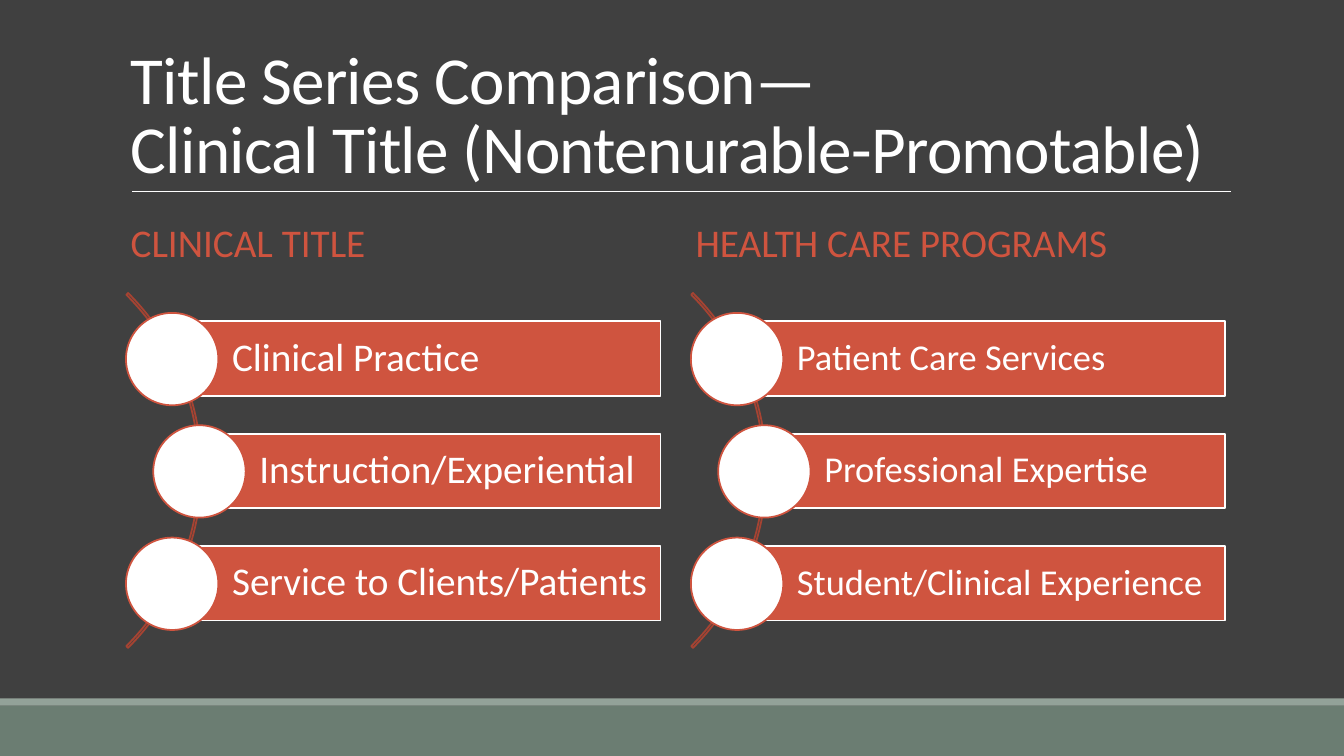
from lxml import etree
from pptx import Presentation
from pptx import util as u
from pptx.dml.color import RGBColor
from pptx.enum import shapes, text
from pptx.oxml.ns import qn

CHARCOAL = RGBColor(0x40, 0x40, 0x40)
WHITE = RGBColor(0xFF, 0xFF, 0xFF)
RUST = RGBColor(0xCF, 0x54, 0x3F)
DARK_RUST = RGBColor(0xA6, 0x43, 0x32)
SAGE = RGBColor(0x6B, 0x7D, 0x72)
LIGHT_SAGE = RGBColor(0x93, 0xA2, 0x99)


def px(length):
    return u.Emu(length * 9525)


class SlideBuilder:
    font = "Calibri"
    outline = 1.25

    def __init__(self, page):
        self.page = page

    def place(self, shape, left, top, width, height):
        shape.left, shape.top = px(left), px(top)
        shape.width, shape.height = px(width), px(height)

    def span(self, para, words, size, color):
        span = para.add_run()
        span.text = words
        span.font.name, span.font.size = self.font, u.Pt(size)
        span.font.color.rgb = color
        return span

    def frame(self, shape, anchor=text.MSO_ANCHOR.MIDDLE, line_spacing=0.9):
        frame = shape.text_frame
        frame.word_wrap = True
        frame.auto_size = text.MSO_AUTO_SIZE.NONE
        frame.vertical_anchor = anchor
        para = frame.paragraphs[0]
        para.alignment = text.PP_ALIGN.LEFT
        para.line_spacing = line_spacing
        return frame, para

    def title(self, lines, left, top, width, height):
        title = self.page.shapes.title
        self.place(title, left, top, width, height)
        _, para = self.frame(title, text.MSO_ANCHOR.BOTTOM, 0.85)
        for index, line in enumerate(lines):
            if index:
                para.add_line_break()
            span = self.span(para, line, 48, WHITE)
            span.font._element.set("spc", "-50")

    def heading(self, words, left, top, width, height):
        box = self.page.shapes.add_textbox(px(left), px(top), px(width), px(height))
        _, para = self.frame(box)
        para.space_before, para.space_after = u.Pt(12), u.Pt(2)
        self.span(para, words, 28, RUST)

    def shape(self, kind, left, top, width, height, fill=None, line=None):
        shape = self.page.shapes.add_shape(kind, px(left), px(top), px(width), px(height))
        shape.shadow.inherit = False
        if fill is None:
            shape.fill.background()
        else:
            shape.fill.solid()
            shape.fill.fore_color.rgb = fill
        if line is None:
            shape.line.fill.background()
        else:
            shape.line.color.rgb = line
            shape.line.width = u.Pt(self.outline)
        return shape

    def rule(self, left, right, top):
        rule = self.page.shapes.add_connector(
            shapes.MSO_CONNECTOR.STRAIGHT, px(left), px(top), px(right), px(top))
        rule.line.color.rgb = WHITE
        rule.line.width = u.Pt(0.5)
        etree.SubElement(rule._element.spPr, qn("a:effectLst"))

    def arc(self, left, top, size):
        arc = self.shape(shapes.MSO_SHAPE.BLOCK_ARC, left, top, size, size, line=DARK_RUST)
        for index, value in enumerate((189, 27, 0.005)):
            arc.adjustments[index] = value

    def bar(self, words, left, top, width, height, size, inset):
        bar = self.shape(shapes.MSO_SHAPE.RECTANGLE, left, top, width, height, RUST, WHITE)
        frame, para = self.frame(bar)
        frame.margin_left = px(57)
        frame.margin_top = frame.margin_right = frame.margin_bottom = px(inset)
        self.span(para, words, size, WHITE)

    def curved_list(self, items, left, size, inset):
        self.arc(left - 406, 209, 478)
        for row, words in enumerate(items):
            indent = 26 if row == 1 else 0
            top = 306 + 107 * row
            self.bar(words, left + 44 + indent, top, 465 - indent, 71, size, inset)
            self.shape(shapes.MSO_SHAPE.OVAL, left + indent, top - 8, 88, 88, WHITE, RUST)


def main():
    deck = Presentation()
    deck.slide_width, deck.slide_height = px(1280), px(720)
    page = deck.slides.add_slide(deck.slide_layouts[5])
    page.background.fill.solid()
    page.background.fill.fore_color.rgb = CHARCOAL
    builder = SlideBuilder(page)

    # Footer bands and title
    builder.shape(shapes.MSO_SHAPE.RECTANGLE, 0, 672, 1280, 48, SAGE)
    builder.shape(shapes.MSO_SHAPE.RECTANGLE, 0, 665, 1280, 7, LIGHT_SAGE)
    builder.rule(126, 1172, 182)
    builder.title(["Title Series Comparison—", "Clinical Title (Nontenurable-Promotable)"],
                  115, 30, 1056, 153)

    # Two columns: heading, items, text size, text inset
    columns = [
        ("CLINICAL TITLE",
         ["Clinical Practice", "Instruction/Experiential", "Service to Clients/Patients"], 28, 8),
        ("HEALTH CARE PROGRAMS",
         ["Patient Care Services", "Professional Expertise", "Student/Clinical Experience"], 26, 7),
    ]
    for column, (heading, items, size, inset) in enumerate(columns):
        shift = 538 * column
        builder.heading(heading, 115 + shift, 194, 518, 78)
        builder.curved_list(items, 120 + shift, size, inset)

    deck.save("out.pptx")


if __name__ == "__main__":
    main()
